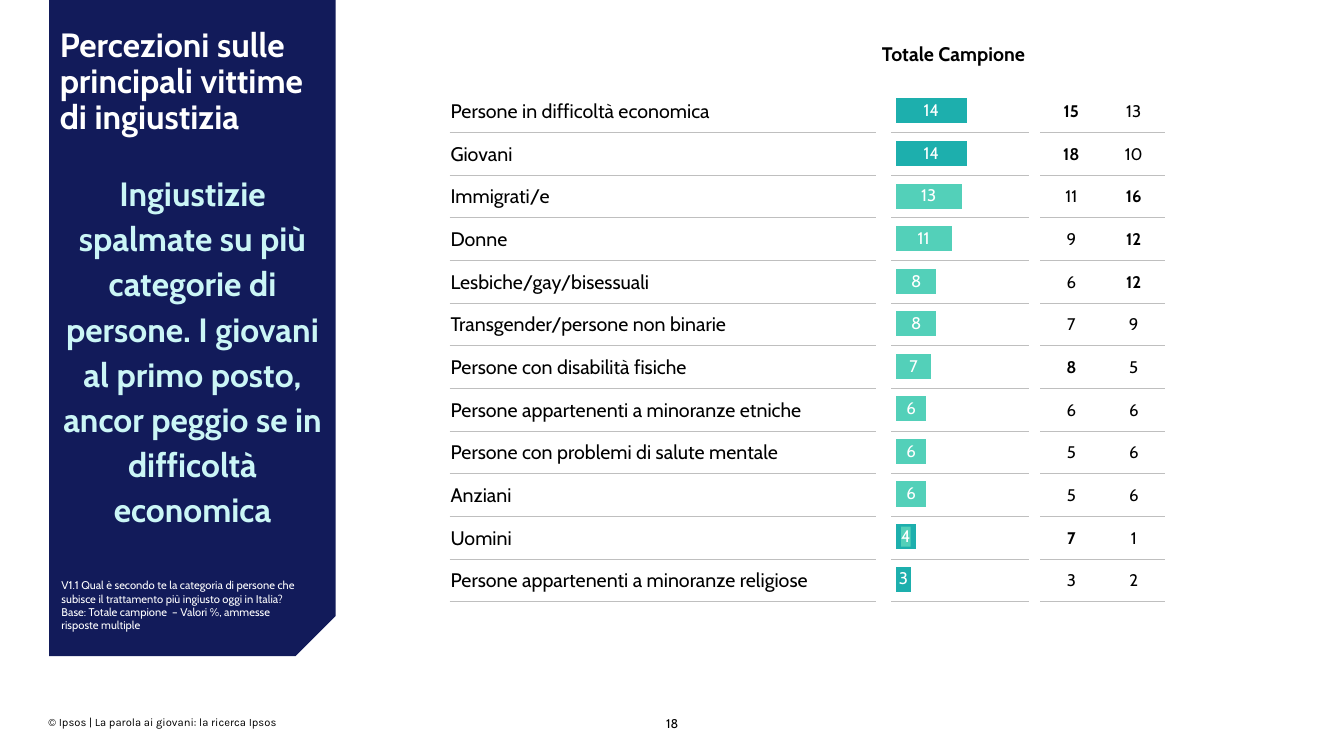
from lxml.etree import SubElement
from pptx import Presentation
from pptx.chart.data import CategoryChartData
from pptx.dml.color import RGBColor
from pptx.enum.chart import XL_CHART_TYPE as CHART, XL_LABEL_POSITION as LABEL
from pptx.enum.shapes import MSO_SHAPE as SHAPE
from pptx.enum.text import MSO_ANCHOR as ANCHOR, MSO_AUTO_SIZE as AUTO, PP_ALIGN as ALIGN
from pptx.oxml import parse_xml
from pptx.oxml.ns import nsdecls, qn
from pptx.util import Pt

COLORS = {
    "black": "000000", "white": "FFFFFF", "navy": "121B5A", "ice": "CBF6F6",
    "teal": "1DAFAD", "mint": "53D0B9", "rule": "BFBFBF",
}
NO_STYLE = "{2D5ABB26-0587-4C30-8999-92F81FD0307C}"
WIDTHS = [304.6, 10.8, 98.6, 7.9, 44.6, 44.6, 6.5]
ROW_HEIGHT = 30.5
RULED_COLUMNS = (0, 2, 4, 5)
VICTIMS = [
    ("Persone in difficoltà economica", 14, (15, 13), 0),
    ("Giovani", 14, (18, 10), 0),
    ("Immigrati/e", 13, (11, 16), 1),
    ("Donne", 11, (9, 12), 1),
    ("Lesbiche/gay/bisessuali", 8, (6, 12), 1),
    ("Transgender/persone non binarie", 8, (7, 9), None),
    ("Persone con disabilità fisiche", 7, (8, 5), 0),
    ("Persone appartenenti a minoranze etniche", 6, (6, 6), None),
    ("Persone con problemi di salute mentale", 6, (5, 6), None),
    ("Anziani", 6, (5, 6), None),
    ("Uomini", 4, (7, 1), 0),
    ("Persone appartenenti a minoranze religiose", 3, (3, 2), None),
]
MINT_ROWS = range(2, 10)
MARKED_ROW = 10


def rgb(name):
    return RGBColor.from_string(COLORS[name])


class Deck:
    font = "Cabin"

    def __init__(self, prs):
        self.slide = prs.slides.add_slide(prs.slide_layouts[5])
        self.shapes = self.slide.shapes

    def style(self, font, size, color="black", bold=False, name=None):
        font.name = name or self.font
        font.size = Pt(size)
        font.bold = bold
        font.color.rgb = rgb(color)

    def put_text(self, tf, text, size, color="black", bold=False, align=ALIGN.LEFT,
                 spacing=None, name=None):
        p = tf.paragraphs[0]
        p.text = text
        p.alignment = align
        if spacing:
            p.line_spacing = spacing
        self.style(p.font, size, color, bold, name)

    def frame(self, sp, box, anchor):
        sp.left, sp.top, sp.width, sp.height = map(Pt, box)
        tf = sp.text_frame
        tf.word_wrap = True
        tf.auto_size = AUTO.NONE
        tf.vertical_anchor = anchor
        tf.margin_left = tf.margin_top = tf.margin_right = tf.margin_bottom = 0
        return tf

    def title(self, box, text, size, **look):
        sp = self.shapes.title
        self.shapes._spTree.append(sp._element)
        self.put_text(self.frame(sp, box, ANCHOR.TOP), text, size, **look)

    def text(self, box, text, size, anchor=ANCHOR.TOP, **look):
        sp = self.shapes.add_textbox(*map(Pt, box))
        self.put_text(self.frame(sp, box, anchor), text, size, **look)

    def panel(self, box, snip, color):
        sp = self.shapes.add_shape(SHAPE.SNIP_1_RECTANGLE, *map(Pt, box))
        sp.adjustments[0] = snip
        sp.shadow.inherit = False
        sp.fill.solid()
        sp.fill.fore_color.rgb = rgb(color)
        sp.line.fill.background()
        sp._element.spPr.get_or_add_xfrm().set("flipV", "1")

    def table(self, left, top, widths, rows, height):
        sp = self.shapes.add_table(rows, len(widths), Pt(left), Pt(top),
                                   Pt(sum(widths)), Pt(rows * height))
        table = sp.table
        table.first_row = table.horz_banding = False
        table._tbl.tblPr.find(qn("a:tableStyleId")).text = NO_STYLE
        for column, width in zip(table.columns, widths):
            column.width = Pt(width)
        for row in table.rows:
            row.height = Pt(height)
        return table

    def cell(self, cell, text="", size=12, ruled=False, anchor=ANCHOR.MIDDLE,
             margin=0.7, **look):
        cell.margin_left = cell.margin_right = Pt(0.7)
        cell.margin_top, cell.margin_bottom = Pt(margin), 0
        cell.vertical_anchor = anchor
        if ruled:
            line = SubElement(cell._tc.get_or_add_tcPr(), qn("a:lnB"), w=str(Pt(0.5)))
            fill = SubElement(line, qn("a:solidFill"))
            SubElement(fill, qn("a:srgbClr"), val=COLORS["rule"])
        cell.fill.background()
        self.put_text(cell.text_frame, text, size, **look)

    def bars(self, box, values):
        data = CategoryChartData()
        data.categories = [str(n) for n in range(1, len(values) + 1)]
        data.add_series("Totale Campione", values)
        chart = self.shapes.add_chart(CHART.BAR_STACKED, *map(Pt, box), data).chart
        chart.has_legend = chart.has_title = False
        self.style(chart.font, 10)
        chart.category_axis.visible = chart.value_axis.visible = False
        chart.category_axis.reverse_order = True
        chart.value_axis.has_major_gridlines = False
        chart.value_axis.minimum_scale, chart.value_axis.maximum_scale = 0, 50

        plot = chart.plots[0]
        plot.gap_width, plot.overlap = 70, 100
        plot.vary_by_categories = False
        series = plot.series[0]
        series.format.fill.solid()
        series.format.fill.fore_color.rgb = rgb("teal")
        for row in MINT_ROWS:
            fill = series.points[row].format.fill
            fill.solid()
            fill.fore_color.rgb = rgb("mint")

        labels = series.data_labels
        labels.show_value = True
        labels.number_format, labels.number_format_is_linked = "#", False
        labels.position = LABEL.CENTER
        self.style(labels.font, 12, "white")
        marked = series.points[MARKED_ROW].data_label
        self.style(marked.font, 12, "white")
        marked.position = LABEL.CENTER
        marked._dLbl.find(qn("c:txPr")).addprevious(parse_xml(
            f'<c:spPr {nsdecls("c", "a")}><a:solidFill>'
            f'<a:srgbClr val="{COLORS["mint"]}"/></a:solidFill></c:spPr>'))
        self.fill_plot_area(chart._chartSpace.chart.plotArea)

    def fill_plot_area(self, area):
        for old in area.findall(qn("c:layout")):
            area.remove(old)
        area.insert(0, parse_xml(
            f'<c:layout {nsdecls("c")}><c:manualLayout><c:layoutTarget val="inner"/>'
            '<c:xMode val="edge"/><c:yMode val="edge"/><c:x val="0.01"/><c:y val="0"/>'
            '<c:w val="0.97"/><c:h val="0.99"/></c:manualLayout></c:layout>'))


def main():
    prs = Presentation()
    prs.slide_width, prs.slide_height = Pt(960), Pt(540)
    s = Deck(prs)

    table = s.table(321.1, 64.1, WIDTHS, len(VICTIMS), ROW_HEIGHT)
    for row, (label, total, split, strong) in enumerate(VICTIMS):
        for column in range(len(WIDTHS)):
            look = {"ruled": column in RULED_COLUMNS}
            if column == 0:
                look.update(text=label, size=14)
            elif column in (4, 5):
                look.update(text=str(split[column - 4]), bold=strong == column - 4,
                            align=ALIGN.CENTER)
            s.cell(table.cell(row, column), **look)

    s.bars((638, 64.1, 187.2, 368.6), [total for label, total, split, strong in VICTIMS])
    s.panel((35.2, 0, 204.5, 468.7), 0.14, "navy")
    s.title((42.7, 20.2, 189.4, 72.7), "Percezioni sulle principali vittime di ingiustizia",
            24, color="white", bold=True, spacing=0.9)
    heading = s.table(620.6, 26.6, [121], 1, 23.8)
    s.cell(heading.cell(0, 0), "Totale Campione", 14, anchor=ANCHOR.TOP, margin=3.6,
           bold=True, align=ALIGN.CENTER)
    s.text((43.9, 412.6, 174.2, 38.9),
           "V1.1 Qual è secondo te la categoria di persone che subisce il trattamento più "
           "ingiusto oggi in Italia? Base: Totale campione  – Valori %, ammesse risposte multiple",
           8, anchor=ANCHOR.BOTTOM, color="white")
    s.text((39.6, 120.2, 195.8, 257),
           "Ingiustizie spalmate su più categorie di persone. I giovani al primo posto, "
           "ancor peggio se in difficoltà economica",
           24, color="ice", bold=True, align=ALIGN.CENTER, spacing=1.12)
    s.text((460.8, 510.5, 38.9, 10.8), "18", 9, align=ALIGN.CENTER, spacing=1.1)
    s.text((34.6, 511.2, 218.2, 10.8), "© Ipsos | La parola ai giovani: la ricerca Ipsos",
           8, name="Karla")
    prs.save("out.pptx")


if __name__ == "__main__":
    main()
